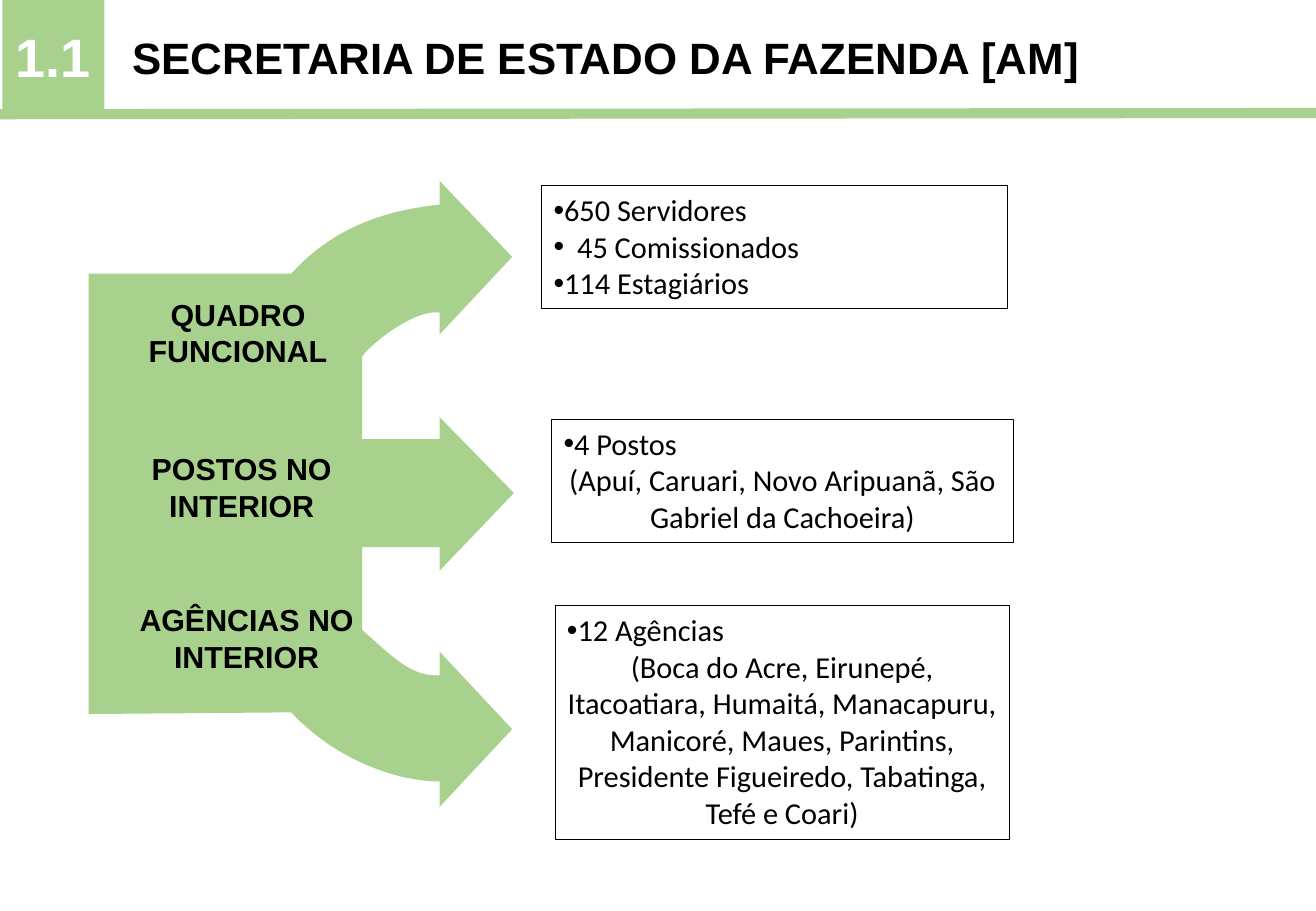
from lxml import etree
from pptx import Presentation
from pptx.dml.color import RGBColor
from pptx.enum import shapes, text
from pptx.oxml import ns
from pptx.util import Pt

COLORS = {"green": "A9D18E", "black": "000000", "white": "FFFFFF"}
LEFT, CENTER, JUSTIFY = text.PP_ALIGN.LEFT, text.PP_ALIGN.CENTER, text.PP_ALIGN.JUSTIFY

# Arrow outline in points from its top left: 2 numbers are a corner, 6 a Bézier curve
ARROW_OUTLINE = [
    (0, 316), (0, 55), (120, 55), (148, 24, 182, 17, 208, 14),
    (208, 0), (251, 45), (208, 91), (208, 78), (193, 76, 168, 96, 162, 104),
    (162, 153), (208, 153), (208, 140), (252, 185), (208, 231), (208, 217),
    (162, 217), (162, 266), (182, 284, 192, 294, 208, 293),
    (208, 279), (251, 325), (208, 371), (208, 356), (184, 356, 147, 344, 120, 315),
]

# Label box, its text, detail box, its bullets (text, hanging indent), its places
TOPICS = [
    ((58.3, 172, 165.6, 51), "QUADRO FUNCIONAL", (321, 110, 276, 73),
     [("650 Servidores", 0), ("45 Comissionados", 14), ("114 Estagiários", 0)], None),
    ((60.5, 263.5, 165.6, 51), "POSTOS NO INTERIOR", (327, 248.4, 273.6, 73),
     [("4 Postos", 0)], "(Apuí, Caruari, Novo Aripuanã, São Gabriel da Cachoeira)"),
    ((63.4, 353, 165.6, 51), "AGÊNCIAS NO INTERIOR", (329, 359, 269.3, 138.4),
     [("12 Agências", 0)],
     "(Boca do Acre, Eirunepé, Itacoatiara, Humaitá, Manacapuru, Manicoré, Maues, "
     "Parintins, Presidente Figueiredo, Tabatinga, Tefé e Coari)"),
]


def color(name):
    return RGBColor.from_string(COLORS[name])


def points(*lengths):
    return [Pt(length) for length in lengths]


def style_frame(frame, anchor=text.MSO_ANCHOR.TOP):
    frame.word_wrap = True
    frame.auto_size = text.MSO_AUTO_SIZE.NONE
    frame.vertical_anchor = anchor
    frame.margin_left = frame.margin_right = Pt(7.2)
    frame.margin_top = frame.margin_bottom = Pt(3.6)


def write(paragraph, words, size, font="Arial", bold=True, fill="black", align=CENTER):
    paragraph.text = words
    paragraph.alignment = align
    paragraph.font.name, paragraph.font.size, paragraph.font.bold = font, Pt(size), bold
    paragraph.font.color.rgb = color(fill)


def add_bullet(paragraph, indent):
    properties = paragraph._p.get_or_add_pPr()
    properties.set("marL", str(Pt(indent)))
    properties.set("indent", str(-Pt(indent)))
    bullet_font = etree.Element(ns.qn("a:buFont"), typeface="Arial")
    bullet = etree.Element(ns.qn("a:buChar"), char="•")
    default_run = properties.find(ns.qn("a:defRPr"))
    for element in (bullet_font, bullet):
        default_run.addprevious(element)


def add_box(slide, box, fill=None, line=None):
    shape = slide.shapes.add_shape(shapes.MSO_SHAPE.RECTANGLE, *points(*box))
    shape.shadow.inherit = False
    if fill:
        shape.fill.solid()
        shape.fill.fore_color.rgb = color(fill)
    else:
        shape.fill.background()
    if line:
        shape.line.color.rgb = color(line)
        shape.line.width = Pt(0.5)
    else:
        shape.line.fill.background()
    return shape


def add_header(slide, box):
    left, top, width, height = box
    # Rule under the header
    bottom = top + height
    rule = slide.shapes.add_connector(
        shapes.MSO_CONNECTOR.STRAIGHT,
        *points(left - 0.7, bottom + 0.5, left + width + 2, bottom - 0.2))
    rule.line.color.rgb = color("green")
    rule.line.width = Pt(6)
    etree.SubElement(rule._element.spPr, ns.qn("a:effectLst"))
    # Section number
    number = add_box(slide, (left + 1.4, top - 0.7, 60.5, height), fill="green")
    style_frame(number.text_frame, text.MSO_ANCHOR.MIDDLE)
    write(number.text_frame.paragraphs[0], "1.1", 32, fill="white")
    # Title
    title = slide.shapes.title
    title.left, title.top, title.width, title.height = points(left + 71.3, top + 14.4, 700.6, 39)
    style_frame(title.text_frame)
    paragraph = title.text_frame.paragraphs[0]
    write(paragraph, "SECRETARIA DE ESTADO DA FAZENDA [AM]", 26, align=JUSTIFY)
    paragraph.line_spacing = 1.0
    paragraph.space_before = Pt(0)


def curve_points(start, curve, steps=16):
    knots = [start, curve[:2], curve[2:4], curve[4:]]
    for step in range(1, steps + 1):
        t = step / steps
        weights = ((1 - t) ** 3, 3 * t * (1 - t) ** 2, 3 * t * t * (1 - t), t ** 3)
        yield tuple(sum(w * knot[axis] for w, knot in zip(weights, knots)) for axis in (0, 1))


def add_triple_arrow(slide, left, top):
    outline = []
    for part in ARROW_OUTLINE:
        outline.extend([part] if len(part) == 2 else curve_points(outline[-1], part))
    corners = [points(left + x, top + y) for x, y in outline]
    builder = slide.shapes.build_freeform(*corners[0], scale=1.0)
    builder.add_line_segments(corners[1:], close=True)
    arrow = builder.convert_to_shape()
    arrow.shadow.inherit = False
    arrow.fill.solid()
    arrow.fill.fore_color.rgb = color("green")
    arrow.line.fill.background()


def add_topic(slide, label_box, label, detail_box, bullets, places):
    # Label on the arrow
    label_frame = slide.shapes.add_textbox(*points(*label_box)).text_frame
    style_frame(label_frame)
    write(label_frame.paragraphs[0], label, 18)
    # Detail box
    frame = add_box(slide, detail_box, line="black").text_frame
    style_frame(frame)
    for index, (words, indent) in enumerate(bullets):
        paragraph = frame.add_paragraph() if index else frame.paragraphs[0]
        write(paragraph, words, 18, "Calibri", False, align=LEFT)
        add_bullet(paragraph, indent)
    if places:
        write(frame.add_paragraph(), places, 18, "Calibri", False)


def main():
    presentation = Presentation()
    presentation.slide_width, presentation.slide_height = points(780, 540)
    slide = presentation.slides.add_slide(presentation.slide_layouts[5])
    add_header(slide, (0, 0, 780, 67.2))
    add_triple_arrow(slide, 52.6, 107.3)
    for topic in TOPICS:
        add_topic(slide, *topic)
    presentation.save("out.pptx")


if __name__ == "__main__":
    main()
